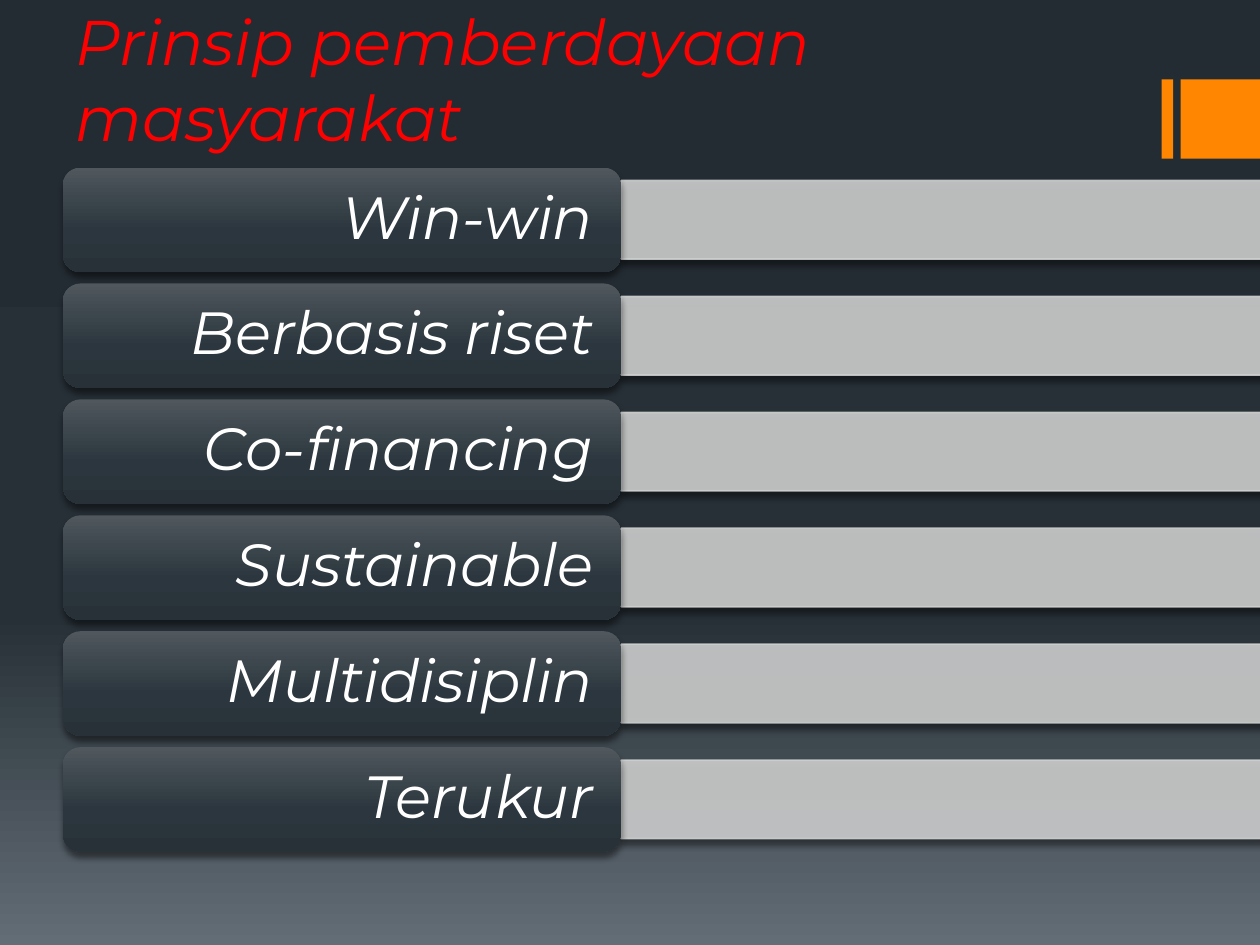
from lxml import etree
from pptx import Presentation
from pptx import util as u
from pptx.dml.color import RGBColor
from pptx.enum import shapes, text
from pptx.oxml.ns import qn

RED = RGBColor(0xFF, 0x00, 0x00)
WHITE = RGBColor(0xFF, 0xFF, 0xFF)
ORANGE = RGBColor(0xFF, 0x86, 0x00)
SILVER = RGBColor(0xCD, 0xCE, 0xCE)
BLACK = RGBColor(0, 0, 0)
NIGHT = [(0, RGBColor(0x24, 0x2C, 0x33)), (65, RGBColor(0x27, 0x30, 0x37)),
         (100, RGBColor(0x63, 0x6D, 0x76))]
SLATE = [(0, RGBColor(0x50, 0x57, 0x5D)), (60, RGBColor(0x2B, 0x36, 0x3E)),
         (100, RGBColor(0x28, 0x31, 0x38))]

LABELS = ["Win-win", "Berbasis riset", "Co-financing",
          "Sustainable", "Multidisiplin", "Terukur"]

# Row grid, in inches
LEFT, TOP, PITCH, HIGH = 0.5, 1.33, 0.92, 0.83
TAG, BAR = 4.43, 6.65


def node(parent, tag, **attrs):
    return etree.SubElement(parent, qn(tag), **attrs)


def alpha(color, share):
    node(color, "a:alpha", val=str(share * 1000))


class Deck:
    font = "Montserrat"

    def __init__(self, wide, high):
        self.prs = Presentation()
        self.prs.slide_width, self.prs.slide_height = u.Inches(wide), u.Inches(high)
        self.slide = self.prs.slides.add_slide(self.prs.slide_layouts[5])

    def blend(self, fill, owner, stops):
        """Fill from top to bottom through the given stops."""
        fill.gradient()
        fill.gradient_angle = 270
        ramp = next(owner.iter(qn("a:gsLst")))
        for old in list(ramp):
            ramp.remove(old)
        for pos, color in stops:
            stop = node(ramp, "a:gs", pos=str(pos * 1000))
            node(stop, "a:srgbClr", val=str(color))

    def back(self, stops):
        self.blend(self.slide.background.fill, self.slide.element, stops)

    def label(self, frame, words, size, color, align):
        par = frame.paragraphs[0]
        par.alignment = align
        run = par.add_run()
        run.text = words
        run.font.name, run.font.size = self.font, u.Pt(size)
        run.font.italic = True
        run.font.color.rgb = color
        return par

    def title(self, words, *box):
        hold = self.slide.shapes.title
        hold.left, hold.top, hold.width, hold.height = map(u.Inches, box)
        frame = hold.text_frame
        frame.auto_size = text.MSO_AUTO_SIZE.NONE
        frame.vertical_anchor = text.MSO_ANCHOR.BOTTOM
        self.label(frame, words, 36, RED, text.PP_ALIGN.LEFT)

    def shape(self, kind, *box):
        item = self.slide.shapes.add_shape(kind, *map(u.Inches, box))
        item.shadow.inherit = False
        item.line.fill.background()
        return item

    def block(self, *box):
        item = self.shape(shapes.MSO_SHAPE.RECTANGLE, *box)
        item.fill.solid()
        item.fill.fore_color.rgb = ORANGE

    def shade(self, item):
        """Soft shadow straight below the shape."""
        glow = node(item._element.spPr.find(qn("a:effectLst")), "a:outerShdw",
                    blurRad=str(u.Pt(3.8)), dist=str(u.Pt(3)),
                    dir="5400000", algn="ctr", rotWithShape="0")
        alpha(node(glow, "a:srgbClr", val=str(BLACK)), 48)

    def arrow(self, *box):
        item = self.shape(shapes.MSO_SHAPE.RIGHT_ARROW, *box)
        item.adjustments[0] = 0.75
        item.fill.solid()
        item.line.width = u.Pt(1)
        item.line.fill.solid()
        item.fill.fore_color.rgb = item.line.color.rgb = SILVER
        for color in item._element.spPr.iter(qn("a:srgbClr")):
            alpha(color, 90)
        self.shade(item)

    def tag(self, words, *box):
        item = self.shape(shapes.MSO_SHAPE.ROUNDED_RECTANGLE, *box)
        self.blend(item.fill, item._element, SLATE)
        self.shade(item)
        frame = item.text_frame
        frame.word_wrap = True
        frame.vertical_anchor = text.MSO_ANCHOR.MIDDLE
        frame.margin_left = frame.margin_right = u.Inches(0.18)
        frame.margin_top = frame.margin_bottom = u.Inches(0.11)
        par = self.label(frame, words, 34, WHITE, text.PP_ALIGN.RIGHT)
        par.line_spacing = 0.9


def main():
    deck = Deck(10, 7.5)
    deck.back(NIGHT)

    # Orange marks at the right edge
    deck.block(9.22, 0.63, 0.09, 0.63)
    deck.block(9.37, 0.63, 0.63, 0.63)

    deck.title("Prinsip pemberdayaan masyarakat", LEFT, 0.02, 9, 1.25)

    # One arrow and one label per principle
    for row, words in enumerate(LABELS):
        top = TOP + row * PITCH
        deck.arrow(LEFT + TAG, top, BAR, HIGH)
        deck.tag(words, LEFT, top, TAG, HIGH)

    deck.prs.save("out.pptx")


if __name__ == "__main__":
    main()
